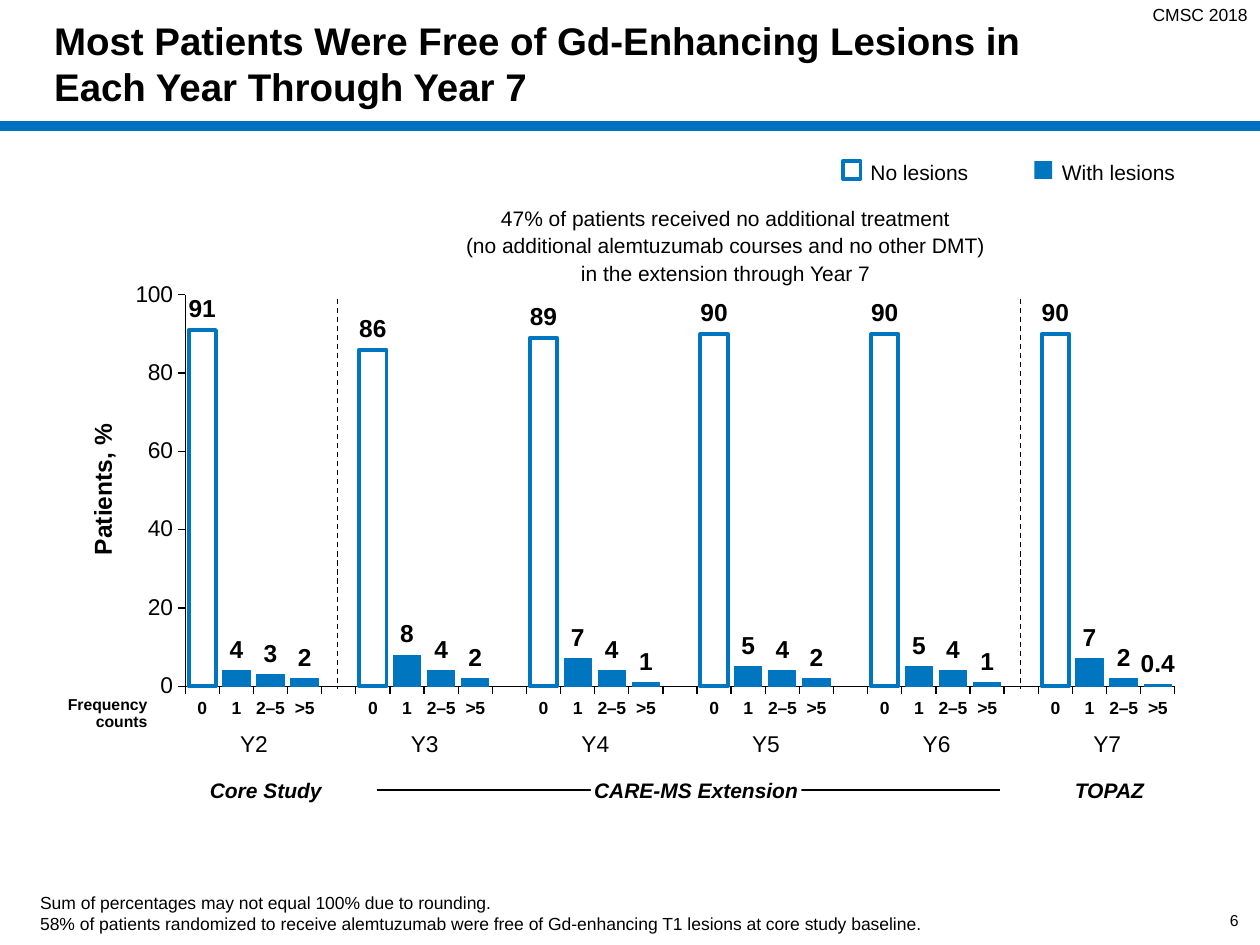
"""Build the slide on yearly Gd-enhancing lesion counts."""
from pptx import Presentation
from pptx.chart.data import CategoryChartData
from pptx.dml.color import RGBColor
from pptx.enum.chart import XL_CHART_TYPE, XL_TICK_MARK
from pptx.enum.dml import MSO_LINE
from pptx.enum.shapes import MSO_CONNECTOR, MSO_SHAPE
from pptx.enum.text import MSO_ANCHOR, PP_ALIGN
from pptx.oxml import parse_xml
from pptx.oxml.ns import nsdecls, qn
from pptx.util import Inches, Pt

COLUMN = XL_CHART_TYPE.COLUMN_CLUSTERED
OUT, NONE = XL_TICK_MARK.OUTSIDE, XL_TICK_MARK.NONE
DASH, STRAIGHT, RECT = MSO_LINE.DASH, MSO_CONNECTOR.STRAIGHT, MSO_SHAPE.RECTANGLE
TOP, MIDDLE, BOTTOM = MSO_ANCHOR.TOP, MSO_ANCHOR.MIDDLE, MSO_ANCHOR.BOTTOM
LEFT, CENTER, RIGHT = PP_ALIGN.LEFT, PP_ALIGN.CENTER, PP_ALIGN.RIGHT

HEX = {"black": "000000", "white": "FFFFFF", "bar": "0076C0", "rule": "0070C0"}
COLOR = {name: RGBColor.from_string(code) for name, code in HEX.items()}
FONT = "Arial"

TITLE = "Most Patients Were Free of Gd-Enhancing Lesions in\nEach Year Through Year 7"
COUNTS = ["0", "1", "2–5", ">5"]
YEARS = {
    "Y2": [91, 4, 3, 2],
    "Y3": [86, 8, 4, 2],
    "Y4": [89, 7, 4, 1],
    "Y5": [90, 5, 4, 2],
    "Y6": [90, 5, 4, 1],
    "Y7": [90, 7, 2, 0.4],
}
STUDIES = [("Core Study", 1.66, 0.9), ("CARE-MS Extension", 4.69, 1.67), ("TOPAZ", 8.51, 0.59)]
LEGEND = [("No lesions", 6.69, "white"), ("With lesions", 8.21, "bar")]
NOTES = [
    "Sum of percentages may not equal 100% due to rounding.",
    "58% of patients randomized to receive alemtuzumab were free of "
    "Gd-enhancing T1 lesions at core study baseline.",
]
CALLOUT = (
    "47% of patients received no additional treatment\n"
    "(no additional alemtuzumab courses and no other DMT)\n"
    "in the extension through Year 7"
)
LINES = [
    (0, 1, 10, 1, "rule", 5.75, None),
    (2.99, 6.27, 7.94, 6.27, "black", 0.75, None),
    (2.68, 2.37, 2.68, 5.47, "black", 0.75, DASH),
    (8.1, 2.37, 8.1, 5.47, "black", 0.75, DASH),
]

CHART = (0.49, 1.55, 9.07, 4.76)
PLOT = {"x": 0.108, "y": 0.166, "w": 0.866, "h": 0.653}
GROUP = len(COUNTS) + 1
SLOTS = len(YEARS) * GROUP - 1
PLOT_X = CHART[0] + PLOT["x"] * CHART[2]
PLOT_H = PLOT["h"] * CHART[3]
BASE = CHART[1] + PLOT["y"] * CHART[3] + PLOT_H
SLOT = PLOT["w"] * CHART[2] / SLOTS


def style(font, size, bold=False, italic=False):
    font.name, font.size, font.bold, font.italic = FONT, Pt(size), bold, italic
    font.color.rgb = COLOR["black"]


def write(shape, lines, size, align=LEFT, anchor=TOP, inset=(0.1, 0.05),
          space=None, bold=False, italic=False):
    frame = shape.text_frame
    frame.word_wrap, frame.vertical_anchor = True, anchor
    frame.margin_left = frame.margin_right = Inches(inset[0])
    frame.margin_top = frame.margin_bottom = Inches(inset[1])
    for i, line in enumerate(lines):
        para = frame.add_paragraph() if i else frame.paragraphs[0]
        para.text, para.alignment = line, align
        if space:
            para.line_spacing = space
        style(para.font, size, bold, italic)


def add_text(slide, box, lines, size, **look):
    shape = slide.shapes.add_textbox(*map(Inches, box))
    write(shape, lines, size, **look)
    return shape


def add_box(slide, box, fill):
    shape = slide.shapes.add_shape(RECT, *map(Inches, box))
    shape.shadow.inherit = False
    shape.fill.solid()
    shape.fill.fore_color.rgb = COLOR[fill]
    shape.line.fill.background()
    return shape


def add_line(slide, x1, y1, x2, y2, color, width, dash):
    line = slide.shapes.add_connector(STRAIGHT, *map(Inches, (x1, y1, x2, y2)))
    line.line.color.rgb, line.line.width = COLOR[color], Pt(width)
    if dash:
        line.line.dash_style = dash
    line.element.spPr.append(parse_xml(f"<a:effectLst {nsdecls('a')}/>"))


def place_plot(chart):
    area = chart.element.find(".//" + qn("c:plotArea"))
    for old in area.findall(qn("c:layout")):
        area.remove(old)
    spots = "".join(f'<c:{key} val="{val}"/>' for key, val in PLOT.items())
    area.insert(0, parse_xml(
        f'<c:layout {nsdecls("c")}><c:manualLayout><c:layoutTarget val="inner"/>'
        f'<c:xMode val="edge"/><c:yMode val="edge"/>{spots}</c:manualLayout></c:layout>'))
    skip = parse_xml(f'<c:tickLblSkip {nsdecls("c")} val="1"/>')
    area.find(".//" + qn("c:noMultiLvlLbl")).addprevious(skip)


def add_bars(slide):
    data = CategoryChartData()
    data.categories = ((COUNTS + [""]) * len(YEARS))[:SLOTS]
    vals = [val for year in YEARS.values() for val in year + [None]]
    data.add_series("Patients, %", vals[:SLOTS])
    chart = slide.shapes.add_chart(COLUMN, *map(Inches, CHART), data).chart
    chart.has_legend = chart.has_title = False
    style(chart.font, 14, bold=True)
    for axis, size, bold in ((chart.category_axis, 10, True), (chart.value_axis, 13, False)):
        axis.has_major_gridlines = False
        axis.major_tick_mark, axis.minor_tick_mark = OUT, NONE
        style(axis.tick_labels.font, size, bold)
        axis.format.line.color.rgb, axis.format.line.width = COLOR["black"], Pt(0.75)
    scale = chart.value_axis
    scale.minimum_scale, scale.maximum_scale, scale.major_unit = 0, 100, 20
    scale.tick_labels.number_format = "#,##0"
    scale.tick_labels.number_format_is_linked = False
    plot = chart.plots[0]
    plot.gap_width, plot.vary_by_categories = 25, False
    bars = plot.series[0]
    bars.format.fill.solid()
    bars.format.fill.fore_color.rgb = COLOR["bar"]
    bars.format.line.color.rgb, bars.format.line.width = COLOR["bar"], Pt(0.5)
    for i in range(0, SLOTS, GROUP):
        look = bars.points[i].format
        look.fill.solid()
        look.fill.fore_color.rgb = COLOR["white"]
        look.line.color.rgb, look.line.width = COLOR["bar"], Pt(2.25)
    place_plot(chart)


def add_labels(slide):
    for y, (year, vals) in enumerate(YEARS.items()):
        start = PLOT_X + y * GROUP * SLOT
        mid = start + len(COUNTS) / 2 * SLOT
        add_text(slide, (mid - 0.38, 5.74, 0.77, 0.32), [year], 13, align=CENTER)
        for i, val in enumerate(vals):
            left = start + (i + 0.5) * SLOT - 0.25
            top = BASE - val / 100 * PLOT_H - 0.34
            add_text(slide, (left, top, 0.5, 0.34), [f"{val:g}"], 14, align=CENTER, bold=True)


def main():
    deck = Presentation()
    deck.slide_width, deck.slide_height = Inches(10), Inches(7.5)
    slide = deck.slides.add_slide(deck.slide_layouts[5])
    title = slide.shapes.title
    title.left, title.top, title.width, title.height = map(Inches, (0.33, 0, 9.51, 1))
    write(title, [TITLE], 22, anchor=MIDDLE, bold=True)
    add_bars(slide)
    for line in LINES:
        add_line(slide, *line)
    add_labels(slide)
    for name, left, width in STUDIES:
        write(add_box(slide, (left, 6.17, width, 0.2), "white"), [name], 12,
              align=CENTER, anchor=MIDDLE, inset=(0, 0), bold=True, italic=True)
    for name, left, fill in LEGEND:
        key = add_box(slide, (left, 1.28, 0.14, 0.14), fill)
        if fill == "white":
            key.line.color.rgb, key.line.width = COLOR["bar"], Pt(2.25)
        add_text(slide, (left + 0.12, 1.2, 1.3, 0.31), [name], 12, space=1.1)
    note = add_text(slide, (3.08, 1.56, 5.36, 1), [CALLOUT], 12, align=CENTER, space=1.1)
    note.text_frame.paragraphs[0].space_before = Pt(2)
    axis = add_text(slide, (-0.21, 3.73, 2.07, 0.31), ["Patients, %"], 14,
                    align=CENTER, inset=(0, 0.05), space=0.9, bold=True)
    axis.rotation = 270
    add_text(slide, (0.3, 5.48, 0.87, 0.37), ["Frequency\ncounts"], 9,
             align=RIGHT, inset=(0, 0.05), space=0.9, bold=True)
    add_text(slide, (0.22, 7.02, 9.42, 0.44), NOTES, 10, anchor=BOTTOM)
    add_text(slide, (7.5, 7.1, 2.33, 0.4), ["6"], 9, align=RIGHT, anchor=MIDDLE, inset=(0, 0))
    add_text(slide, (8.43, -0.02, 1.57, 0.27), ["CMSC 2018"], 10, align=RIGHT)
    deck.save("out.pptx")


if __name__ == "__main__":
    main()
